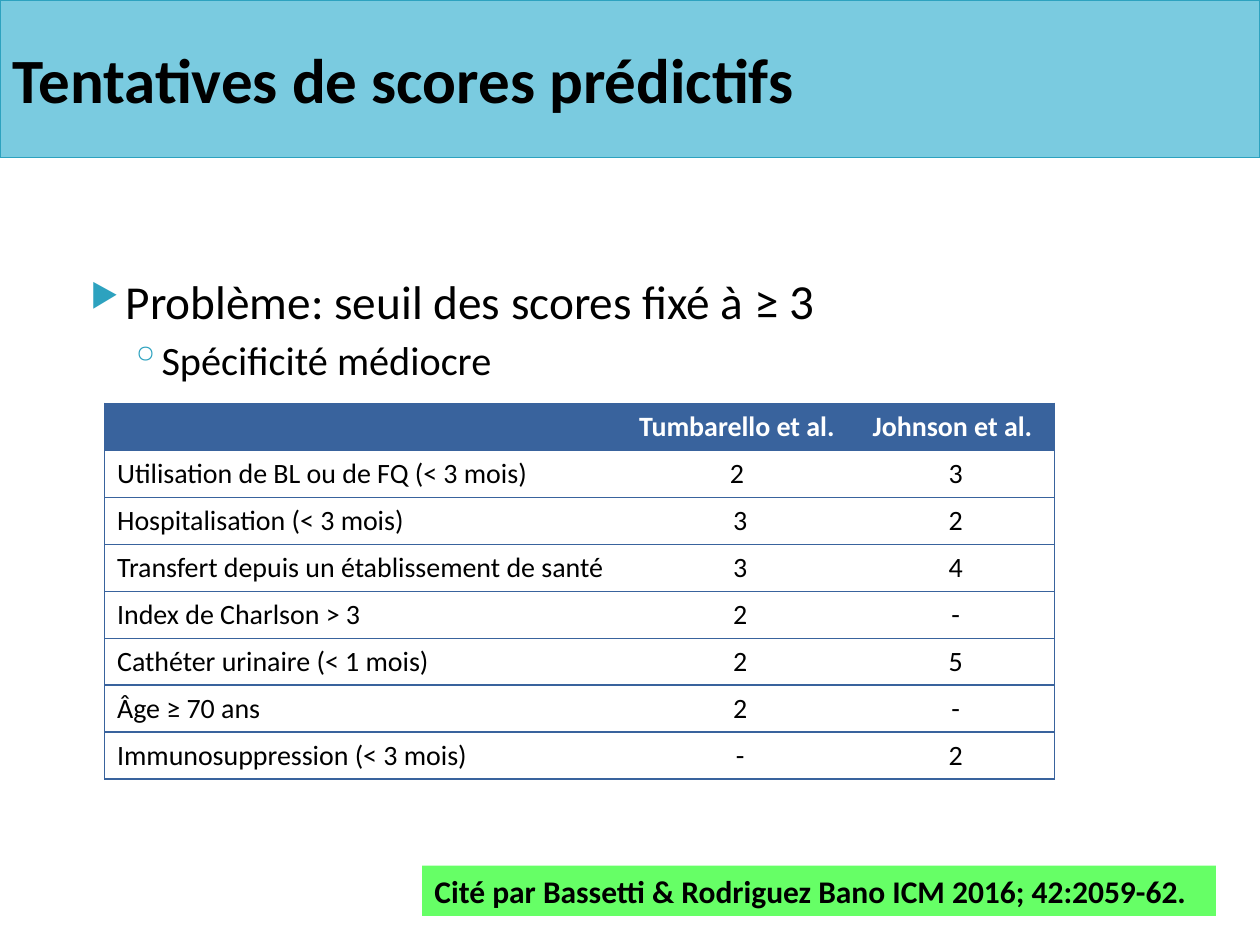
from lxml.etree import SubElement as Sub
from pptx import Presentation
from pptx.dml.color import RGBColor as Rgb
from pptx.enum.shapes import MSO_SHAPE as Kind
from pptx.enum.text import MSO_ANCHOR as Anchor, MSO_AUTO_SIZE as Auto, PP_ALIGN as Align
from pptx.oxml.ns import qn
from pptx.util import Pt

THEME = {
    "font": "Calibri",
    "ink": "000000", "white": "FFFFFF", "band": "7ACBE0", "teal": "2DA2BF",
    "blue": "39639D", "green": "66FF66",
    "title": 36, "lead": 27, "sign": 28, "sub": 23, "cell": 16, "cite": 18,
    "rule": 0.75,
}

TITLE = "Tentatives de scores prédictifs"
POINTS = [
    {"runs": [("Problème: seuil des scores fixé à ", "lead"), ("≥ 3", "sign")],
     "mark": "▶", "scale": 68, "left": 28.8, "hang": 20.16, "gap": 4},
    {"runs": [("Spécificité médiocre", "sub")],
     "mark": "◦", "scale": 100, "left": 48.96, "hang": 18, "gap": 3.2},
]
ROWS = [
    ("", "Tumbarello et al. ", "Johnson et al. "),
    ("Utilisation de BL ou de FQ (< 3 mois)", "2 ", "3"),
    ("Hospitalisation (< 3 mois)", "3", "2"),
    ("Transfert depuis un établissement de santé", "3", "4"),
    ("Index de Charlson > 3", "2", "-"),
    ("Cathéter urinaire (< 1 mois)", "2", "5"),
    ("Âge ≥ 70 ans", "2", "-"),
    ("Immunosuppression (< 3 mois)", "-", "2"),
]
COLS = [296.64, 133.2, 113.04]
ROW = 26.86
CITE = "Cité par Bassetti & Rodriguez Bano ICM 2016; 42:2059-62."


def tint(name):
    return Rgb.from_string(THEME[name])


def box(*dims):
    return [Pt(n) for n in dims]


def put(para, text, size, ink="ink", bold=False):
    run = para.add_run()
    run.text = text
    font = run.font
    font.name, font.size, font.bold = THEME["font"], Pt(THEME[size]), bold
    font.color.rgb = tint(ink)


def paint(shape, name):
    shape.fill.solid()
    shape.fill.fore_color.rgb = tint(name)


def bullet(para, point):
    props = para._p.get_or_add_pPr()
    props.set("marL", str(Pt(point["left"])))
    props.set("indent", str(-Pt(point["hang"])))
    color = Sub(props, qn("a:buClr"))
    Sub(color, qn("a:srgbClr"), val=THEME["teal"])
    Sub(props, qn("a:buSzPct"), val=str(point["scale"] * 1000))
    Sub(props, qn("a:buChar"), char=point["mark"])


def edge(cell, sides):
    props = cell._tc.get_or_add_tcPr()
    for side in "LRTB":
        line = Sub(props, qn("a:ln" + side), w=str(Pt(THEME["rule"])))
        if side in sides:
            fill = Sub(line, qn("a:solidFill"))
            Sub(fill, qn("a:srgbClr"), val=THEME["blue"])
        else:
            Sub(line, qn("a:noFill"))


def add_title(slide):
    title = slide.shapes.title
    title.left, title.top, title.width, title.height = box(0, 0, 720, 90)
    paint(title, "band")
    title.line.color.rgb = tint("teal")
    title.line.width = Pt(THEME["rule"])
    frame = title.text_frame
    frame.vertical_anchor = Anchor.MIDDLE
    para = frame.paragraphs[0]
    para.alignment = Align.LEFT
    put(para, TITLE, "title", bold=True)


def add_points(slide):
    frame = slide.shapes.add_textbox(*box(36, 151.2, 648, 321.84)).text_frame
    frame.word_wrap = True
    for rank, point in enumerate(POINTS):
        para = frame.add_paragraph() if rank else frame.paragraphs[0]
        para.level = rank
        para.space_before = Pt(point["gap"])
        bullet(para, point)
        for text, size in point["runs"]:
            put(para, text, size)


def add_scores(slide):
    dims = box(59.76, 230.4, sum(COLS), ROW * len(ROWS))
    table = slide.shapes.add_table(len(ROWS), len(COLS), *dims).table
    table.first_row = table.horz_banding = False
    for col, width in zip(table.columns, COLS):
        col.width = Pt(width)
    for r, row in enumerate(ROWS):
        table.rows[r].height = Pt(ROW)
        head = r == 0
        for c, text in enumerate(row):
            cell = table.cell(r, c)
            edge(cell, "TB" + ("L" if c == 0 else "R" if c == len(COLS) - 1 else ""))
            if head:
                paint(cell, "blue")
            else:
                cell.fill.background()
                cell.vertical_anchor = Anchor.MIDDLE
            para = cell.text_frame.paragraphs[0]
            para.alignment = Align.CENTER if c else Align.LEFT
            if text:
                put(para, text, "cell", "white" if head else "ink", head)
            else:
                para.font.size = Pt(THEME["cell"])


def add_cite(slide):
    shape = slide.shapes.add_shape(Kind.RECTANGLE, *box(241.2, 494.64, 453.6, 28.8))
    shape.shadow.inherit = False
    paint(shape, "green")
    shape.line.fill.background()
    frame = shape.text_frame
    frame.word_wrap = True
    frame.auto_size = Auto.SHAPE_TO_FIT_TEXT
    frame.vertical_anchor = Anchor.TOP
    para = frame.paragraphs[0]
    para.alignment = Align.LEFT
    put(para, CITE, "cite", bold=True)


def main():
    deck = Presentation()
    deck.slide_width, deck.slide_height = box(720, 540)
    slide = deck.slides.add_slide(deck.slide_layouts[5])
    for add in (add_title, add_points, add_scores, add_cite):
        add(slide)
    deck.save("out.pptx")


if __name__ == "__main__":
    main()
